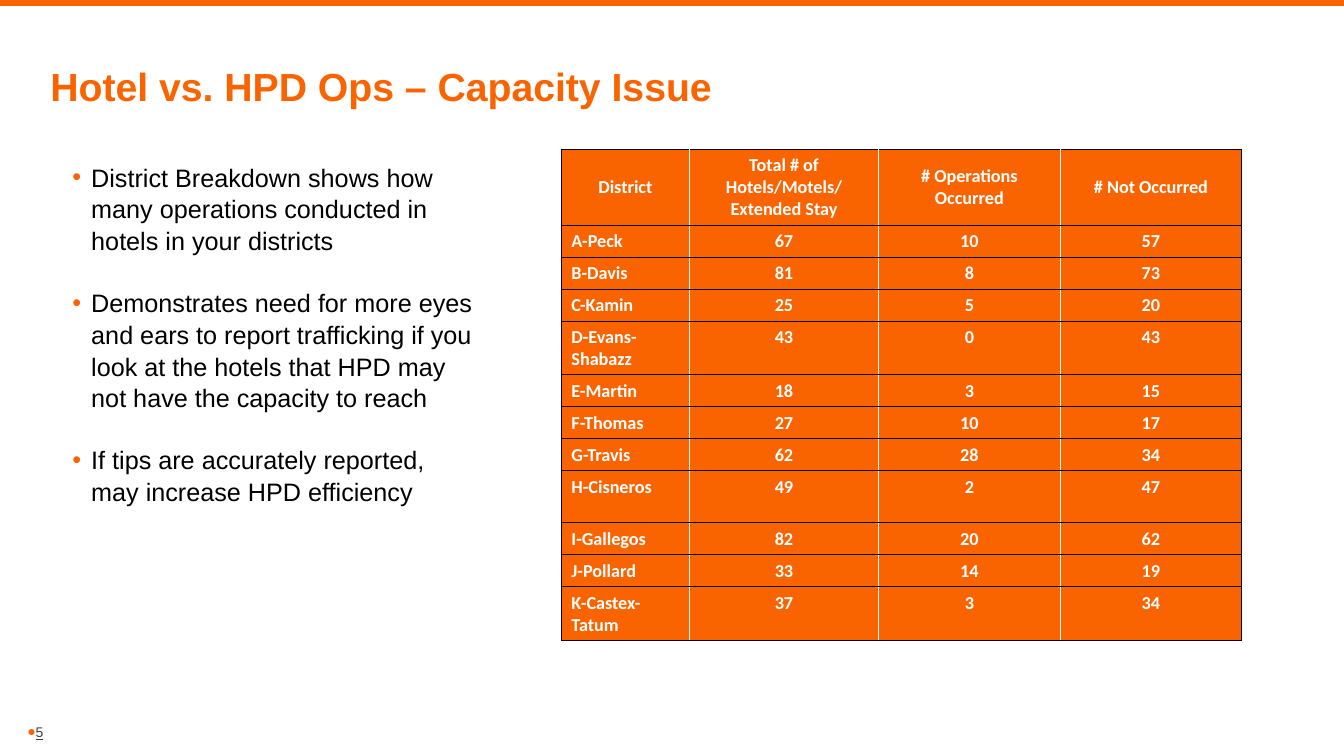
from dataclasses import dataclass

from lxml.etree import SubElement
from pptx import Presentation
from pptx.dml.color import RGBColor as RGB
from pptx.enum.shapes import MSO_CONNECTOR as Connector
from pptx.enum.text import MSO_ANCHOR as Anchor, MSO_AUTO_SIZE as AutoSize, PP_ALIGN as Align
from pptx.oxml.ns import qn
from pptx.util import Pt


@dataclass(frozen=True)
class Theme:
    orange: str = "FA6400"
    black: str = "000000"
    white: str = "FFFFFF"
    grey: str = "404040"
    text_font: str = "Arial"
    table_font: str = "Calibri"
    title_size: float = 28
    body_size: float = 18
    table_size: float = 13
    number_size: float = 10


THEME = Theme()
SLIDE_WIDTH, SLIDE_HEIGHT = 960, 540

TITLE = "Hotel vs. HPD Ops – Capacity Issue"
POINTS = [
    "District Breakdown shows how many operations conducted in hotels in your districts",
    "Demonstrates need for more eyes and ears to report trafficking if you look "
    "at the hotels that HPD may not have the capacity to reach",
    "If tips are accurately reported, may increase HPD efficiency",
]
HEADINGS = ["District", "Total # of Hotels/Motels/\nExtended Stay",
            "# Operations Occurred", "# Not Occurred"]
DISTRICTS = [
    ("A-Peck", 67, 10, 57),
    ("B-Davis", 81, 8, 73),
    ("C-Kamin", 25, 5, 20),
    ("D-Evans-Shabazz", 43, 0, 43),
    ("E-Martin", 18, 3, 15),
    ("F-Thomas", 27, 10, 17),
    ("G-Travis", 62, 28, 34),
    ("H-Cisneros", 49, 2, 47),
    ("I-Gallegos", 82, 20, 62),
    ("J-Pollard", 33, 14, 19),
    ("K-Castex-Tatum", 37, 3, 34),
]
TALL_DISTRICTS = {"D-Evans-Shabazz", "H-Cisneros", "K-Castex-Tatum"}
COLUMN_WIDTHS = [91.4, 135.2, 129.7, 129.7]
HEADER_HEIGHT, ROW_HEIGHT, TALL_HEIGHT = 52.8, 22.4, 37.2


def add_run(paragraph, text, size, color, font, bold=False, underline=False):
    run = paragraph.add_run()
    run.text = text
    run.font.size = Pt(size)
    run.font.name = font
    run.font.bold = bold
    run.font.underline = underline
    run.font.color.rgb = RGB.from_string(color)


def add_bullet(paragraph, mark, indent=0):
    props = paragraph._p.get_or_add_pPr()
    props.set("marL", str(Pt(indent)))
    props.set("indent", str(-Pt(indent)))
    SubElement(SubElement(props, qn("a:buClr")), qn("a:srgbClr"), val=THEME.orange)
    SubElement(props, qn("a:buFont"), typeface=THEME.text_font)
    SubElement(props, qn("a:buChar"), char=mark)


def set_margins(frame, margin):
    frame.margin_left = frame.margin_right = Pt(margin)
    frame.margin_top = frame.margin_bottom = Pt(margin)


def draw_top_rule(slide, y):
    rule = slide.shapes.add_connector(Connector.STRAIGHT, 0, Pt(y), Pt(SLIDE_WIDTH), Pt(y))
    rule.line.color.rgb = RGB.from_string(THEME.orange)
    rule.line.width = Pt(5)
    SubElement(rule._element.spPr, qn("a:effectLst"))


def draw_title(slide, left, top, width, height):
    title = slide.shapes.title
    title.left, title.top, title.width, title.height = map(Pt, (left, top, width, height))
    frame = title.text_frame
    frame.auto_size = AutoSize.NONE
    frame.vertical_anchor = Anchor.TOP
    set_margins(frame, 0)
    heading = frame.paragraphs[0]
    heading.alignment = Align.LEFT
    heading.line_spacing = 0.85
    add_run(heading, TITLE, THEME.title_size, THEME.orange, THEME.text_font, bold=True)


def draw_points(slide, left, top, width, height):
    frame = slide.shapes.add_textbox(*map(Pt, (left, top, width, height))).text_frame
    frame.word_wrap = True
    for index, text in enumerate(POINTS):
        point = frame.add_paragraph() if index else frame.paragraphs[0]
        point.line_spacing = 1.05
        if index:
            point.space_before = Pt(21.6)
        add_bullet(point, "•", 13.5)
        add_run(point, text, THEME.body_size, THEME.black, THEME.text_font)


def set_borders(cell, left, right):
    props = cell._tc.get_or_add_tcPr()
    for side, color in (("L", left), ("R", right), ("T", THEME.black), ("B", THEME.black)):
        border = SubElement(props, qn(f"a:ln{side}"), w=str(Pt(0.5)))
        SubElement(SubElement(border, qn("a:solidFill")), qn("a:srgbClr"), val=color)


def fill_cell(cell, text, align, anchor):
    cell.vertical_anchor = anchor
    frame = cell.text_frame
    for index, line in enumerate(text.split("\n")):
        paragraph = frame.add_paragraph() if index else frame.paragraphs[0]
        paragraph.alignment = align
        add_run(paragraph, line, THEME.table_size, THEME.white, THEME.table_font, bold=True)
    cell.fill.solid()
    cell.fill.fore_color.rgb = RGB.from_string(THEME.orange)


def draw_district_table(slide, left, top):
    rows = [HEADINGS, *DISTRICTS]
    heights = [HEADER_HEIGHT] + [
        TALL_HEIGHT if name in TALL_DISTRICTS else ROW_HEIGHT for name, *_ in DISTRICTS]
    box = (left, top, sum(COLUMN_WIDTHS), sum(heights))
    table = slide.shapes.add_table(len(rows), len(HEADINGS), *map(Pt, box)).table
    table.first_row = table.horz_banding = False
    for column, width in zip(table.columns, COLUMN_WIDTHS):
        column.width = Pt(width)
    last = len(HEADINGS) - 1
    for r, (values, height) in enumerate(zip(rows, heights)):
        table.rows[r].height = Pt(height)
        for c, value in enumerate(values):
            cell = table.cell(r, c)
            set_borders(cell, THEME.white if c else THEME.black,
                        THEME.white if c < last else THEME.black)
            fill_cell(cell, str(value),
                      Align.LEFT if r and c == 0 else Align.CENTER,
                      Anchor.TOP if r else Anchor.MIDDLE)


def draw_slide_number(slide, left, top, width, height):
    frame = slide.shapes.add_textbox(*map(Pt, (left, top, width, height))).text_frame
    frame.word_wrap = True
    frame.vertical_anchor = Anchor.BOTTOM
    set_margins(frame, 0)
    number = frame.paragraphs[0]
    add_bullet(number, "●")
    add_run(number, "5", THEME.number_size, THEME.grey, THEME.text_font, underline=True)


def main():
    deck = Presentation()
    deck.slide_width, deck.slide_height = Pt(SLIDE_WIDTH), Pt(SLIDE_HEIGHT)
    slide = deck.slides.add_slide(deck.slide_layouts[5])
    # Heading
    draw_top_rule(slide, 2)
    draw_title(slide, 36, 50, 888, 53)
    # Key points on the left, district counts on the right
    draw_points(slide, 44.6, 111, 301, 312)
    draw_district_table(slide, 401, 106.6)
    # Footer
    draw_slide_number(slide, 19.5, 516, 21.6, 13)
    deck.save("out.pptx")


if __name__ == "__main__":
    main()
